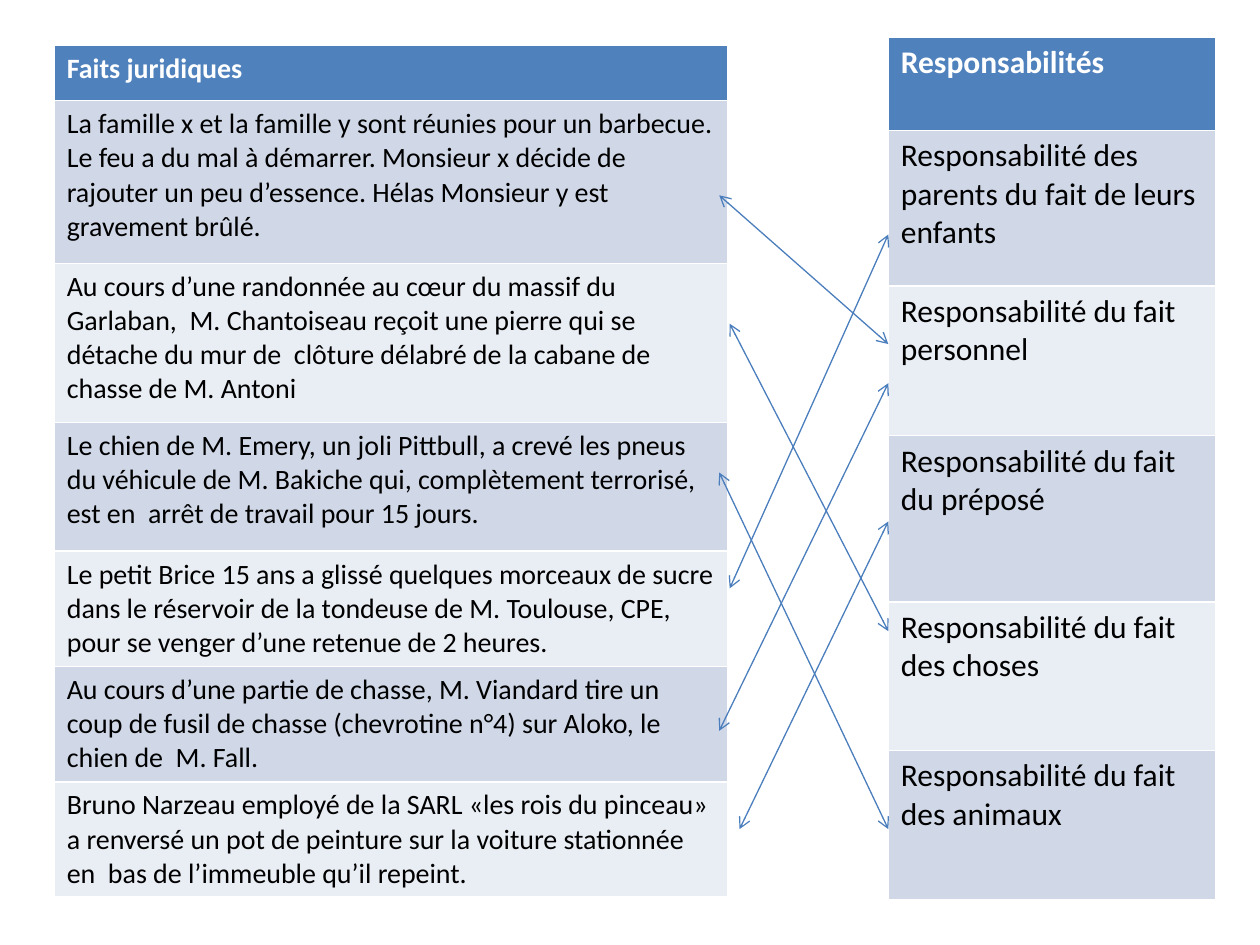
"""Build a slide that matches legal facts with kinds of liability."""
from dataclasses import dataclass

from lxml import etree
from pptx import Presentation
from pptx import util as u
from pptx.dml.color import RGBColor
from pptx.enum import shapes
from pptx.oxml import ns
from pptx.slide import Slide

HEAD = RGBColor(0x4F, 0x81, 0xBD)
BANDS = (RGBColor(0xE9, 0xED, 0xF4), RGBColor(0xD0, 0xD8, 0xE8))
LINE = RGBColor(0x4B, 0x7E, 0xBC)
WHITE = RGBColor(0xFF, 0xFF, 0xFF)
BLACK = RGBColor(0, 0, 0)
FONT = "Calibri"


@dataclass
class Row:
    high: float
    text: str


@dataclass
class Grid:
    left: float
    top: float
    width: float
    size: float
    rows: list[Row]


@dataclass
class Link:
    left: float
    start: float
    end: float


FACTS = Grid(31, 26, 385, 16, [
    Row(31.5, "Faits juridiques"),
    Row(93, "La famille x et la famille y sont réunies pour un barbecue. Le feu a du mal à "
            "démarrer. Monsieur x décide de rajouter un peu d’essence. Hélas Monsieur y est "
            "gravement brûlé."),
    Row(91, "Au cours d’une randonnée au cœur du massif du Garlaban,  M. Chantoiseau reçoit "
            "une pierre qui se détache du mur de  clôture délabré de la cabane de chasse de "
            "M. Antoni"),
    Row(73.5, "Le chien de M. Emery, un joli Pittbull, a crevé les pneus du véhicule de "
              "M. Bakiche qui, complètement terrorisé, est en  arrêt de travail pour 15 jours."),
    Row(65.5, "Le petit Brice 15 ans a glissé quelques morceaux de sucre dans le réservoir de "
              "la tondeuse de M. Toulouse, CPE, pour se venger d’une retenue de 2 heures."),
    Row(65.5, "Au cours d’une partie de chasse, M. Viandard tire un coup de fusil de chasse "
              "(chevrotine n°4) sur Aloko, le chien de  M. Fall."),
    Row(65.5, "Bruno Narzeau employé de la SARL «les rois du pinceau» a renversé un pot de "
              "peinture sur la voiture stationnée en  bas de l’immeuble qu’il repeint."),
])
DUTIES = Grid(507.6, 21, 187.2, 18, [
    Row(53.5, "Responsabilités"),
    Row(89, "Responsabilité des parents du fait de leurs enfants"),
    Row(85.5, "Responsabilité du fait personnel"),
    Row(95, "Responsabilité du fait du préposé"),
    Row(85, "Responsabilité du fait des choses"),
    Row(85, "Responsabilité du fait des animaux"),
])
LINKS = [
    Link(411, 111.6, 196.6),
    Link(417, 185, 360.7),
    Link(411, 270, 473.8),
    Link(417, 336.2, 134),
    Link(422.6, 473.8, 298),
    Link(411, 417.6, 219),
]


def draw_grid(slide: Slide, grid: Grid) -> None:
    high = sum(row.high for row in grid.rows)
    table = slide.shapes.add_table(len(grid.rows), 1, u.Pt(grid.left), u.Pt(grid.top),
                                   u.Pt(grid.width), u.Pt(high)).table
    for num, row in enumerate(grid.rows):
        table.rows[num].height = u.Pt(row.high)
        cell = table.cell(num, 0)
        cell.fill.solid()
        cell.fill.fore_color.rgb = BANDS[num % 2] if num else HEAD
        cell.text_frame.text = row.text
        font = cell.text_frame.paragraphs[0].runs[0].font
        font.name, font.size, font.bold = FONT, u.Pt(grid.size), num == 0
        font.color.rgb = BLACK if num else WHITE


def draw_link(slide: Slide, link: Link) -> None:
    line = slide.shapes.add_connector(shapes.MSO_CONNECTOR.STRAIGHT, u.Pt(link.left),
                                      u.Pt(link.start), u.Pt(DUTIES.left), u.Pt(link.end))
    line.line.color.rgb = LINE
    line.line.width = u.Pt(0.75)
    props = line.element.spPr
    stroke = props.find(ns.qn("a:ln"))
    for end in ("a:headEnd", "a:tailEnd"):
        etree.SubElement(stroke, ns.qn(end), type="arrow")
    etree.SubElement(props, ns.qn("a:effectLst"))


def main() -> None:
    deck = Presentation()
    deck.slide_width, deck.slide_height = u.Pt(720), u.Pt(540)
    slide = deck.slides.add_slide(deck.slide_layouts[6])
    for grid in (FACTS, DUTIES):
        draw_grid(slide, grid)
    for link in LINKS:
        draw_link(slide, link)
    deck.save("out.pptx")


if __name__ == "__main__":
    main()
